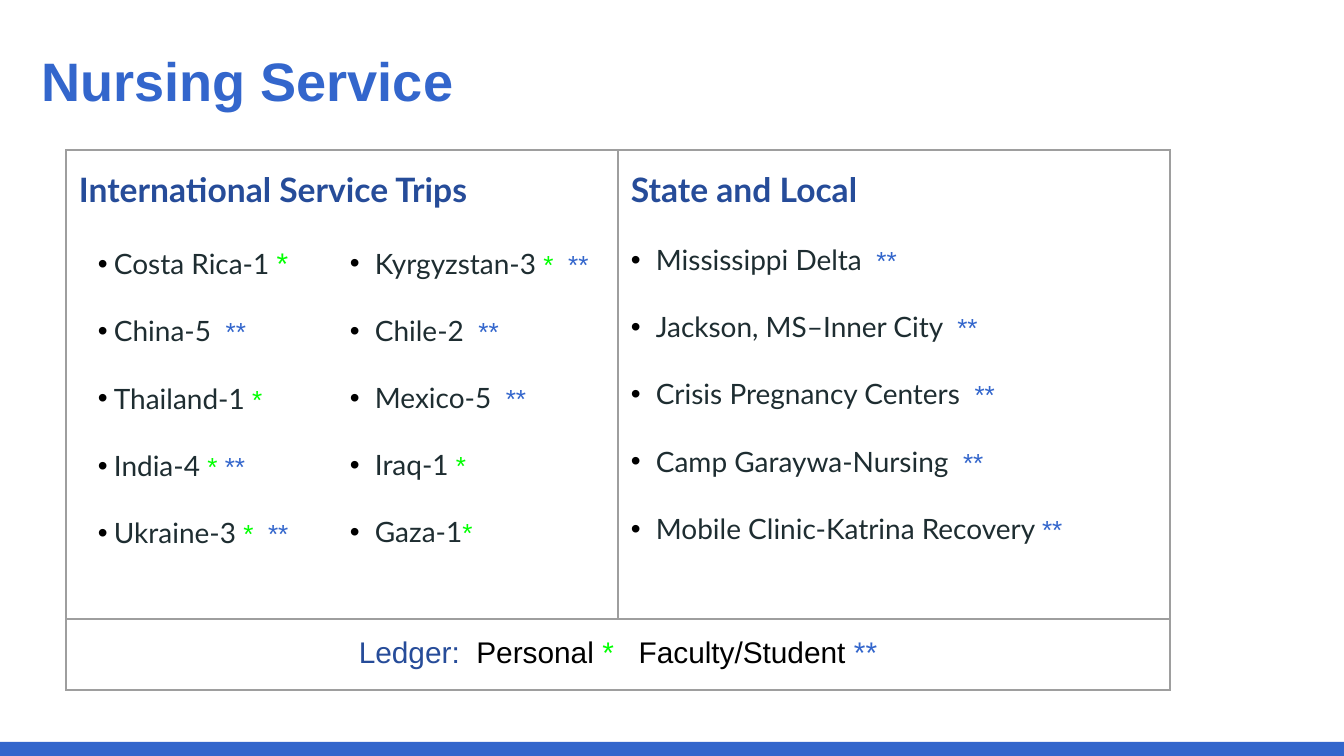
from lxml.etree import SubElement as Sub
from pptx import Presentation
from pptx.dml.color import RGBColor as RGB
from pptx.enum.shapes import MSO_SHAPE as SHAPE
from pptx.enum.text import MSO_ANCHOR as ANCHOR, MSO_AUTO_SIZE as FIT, PP_ALIGN as ALIGN
from pptx.oxml.ns import qn
from pptx.util import Emu, Pt

BLUE = RGB(0x33, 0x66, 0xCC)
NAVY = RGB(0x26, 0x4C, 0x99)
INK = RGB(0x1E, 0x2D, 0x31)
GREEN = RGB(0x00, 0xFF, 0x00)
BLACK = RGB(0x00, 0x00, 0x00)
GREY = RGB(0x9E, 0x9E, 0x9E)

FONTS = {
    "title": (dict(size=Pt(29), name="Arial", bold=True), BLUE),
    "heading": (dict(size=Pt(18), name="Lato", bold=True), NAVY),
    "item": (dict(size=Pt(15), name="Lato", bold=False), INK),
    "personal": (dict(size=Pt(14), name="Arial"), GREEN),
    "group": (dict(size=Pt(14), name="Arial"), BLUE),
    "label": (dict(size=Pt(16), name="Arial"), NAVY),
    "legend": (dict(size=Pt(16), name="Arial"), BLACK),
    "big personal": (dict(size=Pt(16), name="Arial"), GREEN),
    "big group": (dict(size=Pt(16), name="Arial"), BLUE),
}

TRIPS = [
    [("Costa Rica-1 ", "item"), ("*", "big personal")],
    [("China-5 ", "item"), (" **", "group")],
    [("Thailand-1 ", "item"), ("*", "personal")],
    [("India-4 ", "item"), ("* ", "personal"), ("**", "group")],
    [("Ukraine-3 ", "item"), ("*  ", "personal"), ("**", "group")],
]
MORE_TRIPS = [
    [("Kyrgyzstan-3 ", "item"), ("*  ", "personal"), ("**", "group")],
    [("Chile-2 ", "item"), (" **", "group")],
    [("Mexico-5 ", "item"), (" **", "group")],
    [("Iraq-1 ", "item"), ("*", "personal")],
    [("Gaza-1", "item"), ("*", "personal")],
]
LOCAL = ["Mississippi Delta  ", "Jackson, MS–Inner City  ", "Crisis Pregnancy Centers  ",
         "Camp Garaywa-Nursing  ", "Mobile Clinic-Katrina Recovery "]
LEDGER = [("Ledger:  ", "label"), ("Personal ", "legend"), ("* ", "big personal"),
          ("  Faculty/Student ", "legend"), ("**", "big group")]


def px(n):
    return Emu(round(n * 914400 / 134.4))


class Slide:
    """Adds styled elements to one slide."""

    def __init__(self, prs):
        self.s = prs.slides.add_slide(prs.slide_layouts[5])

    def runs(self, p, parts):
        for text, kind in parts:
            r = p.add_run()
            r.text = text
            values, color = FONTS[kind]
            for key, value in values.items():
                setattr(r.font, key, value)
            r.font.color.rgb = color

    def bar(self, *box):
        sp = self.s.shapes.add_shape(SHAPE.RECTANGLE, *map(px, box))
        sp.shadow.inherit = False
        sp.fill.solid()
        sp.fill.fore_color.rgb = BLUE
        sp.line.fill.background()

    def title(self, text, *box):
        sp = self.s.shapes.title
        sp.left, sp.top, sp.width, sp.height = map(px, box)
        tf = sp.text_frame
        margins = dict.fromkeys(("margin_left", "margin_top", "margin_right", "margin_bottom"), px(13))
        for key, value in dict(margins, auto_size=FIT.NONE, vertical_anchor=ANCHOR.MIDDLE).items():
            setattr(tf, key, value)
        p = tf.paragraphs[0]
        p.alignment = ALIGN.LEFT
        self.runs(p, [(text, "title")])

    def table(self, left, top, cols, rows, border=None):
        frame = self.s.shapes.add_table(len(rows), len(cols), px(left), px(top),
                                        px(sum(cols)), px(sum(rows)))
        table = frame.table
        table.first_row = table.horz_banding = False
        for col, width in zip(table.columns, cols):
            col.width = px(width)
        for row, height in zip(table.rows, rows):
            row.height = px(height)
        for cell in table.iter_cells():
            for side in ("left", "top", "right", "bottom"):
                setattr(cell, f"margin_{side}", px(13))
            self.borders(cell, border)
            cell.fill.background()
        return table

    def borders(self, cell, color):
        tcPr = cell._tc.get_or_add_tcPr()
        for side in "LRTB":
            ln = Sub(tcPr, qn(f"a:ln{side}"), w=str(Pt(0.75)))
            if color is None:
                Sub(ln, qn("a:noFill"))
            else:
                Sub(Sub(ln, qn("a:solidFill")), qn("a:srgbClr"), val=str(color))

    def paragraph(self, cell, parts, indent=0, **values):
        tf = cell.text_frame
        p = tf.add_paragraph() if tf.text else tf.paragraphs[0]
        for key, value in values.items():
            setattr(p, key, value)
        self.runs(p, parts)
        if indent:
            pPr = p._p.get_or_add_pPr()
            pPr.set("marL", str(px(indent)))
            pPr.set("indent", str(-px(indent)))
            Sub(Sub(pPr, qn("a:buClr")), qn("a:srgbClr"), val=str(BLACK))
            Sub(pPr, qn("a:buFont"), typeface="Arial")
            Sub(pPr, qn("a:buChar"), char="•")

    def bullets(self, cell, items, indent):
        for parts in items:
            self.paragraph(cell, parts, indent, line_spacing=2.0)


def main():
    prs = Presentation()
    prs.slide_width, prs.slide_height = px(1344), px(756)
    s = Slide(prs)
    s.bar(0, 742, 1344, 14)
    s.title("Nursing Service", 28, 34, 1252, 91)

    service = s.table(66, 150, [552, 552], [469, 71], GREY)
    for cell, text in zip(service.rows[0].cells, ("International Service Trips", "State and Local")):
        s.paragraph(cell, [(text, "heading")], line_spacing=1.15)
    s.bullets(service.cell(0, 1), [[(text, "item"), ("**", "group")] for text in LOCAL], 25)
    ledger = service.cell(1, 0)
    ledger.merge(service.cell(1, 1))
    s.paragraph(ledger, LEDGER, alignment=ALIGN.CENTER, line_spacing=1.15,
                space_before=Pt(12), space_after=Pt(12))

    trips = s.table(85, 200, [252, 271], [339])
    s.bullets(trips.cell(0, 0), TRIPS, 16)
    s.bullets(trips.cell(0, 1), MORE_TRIPS, 25)
    prs.save("out.pptx")


if __name__ == "__main__":
    main()
